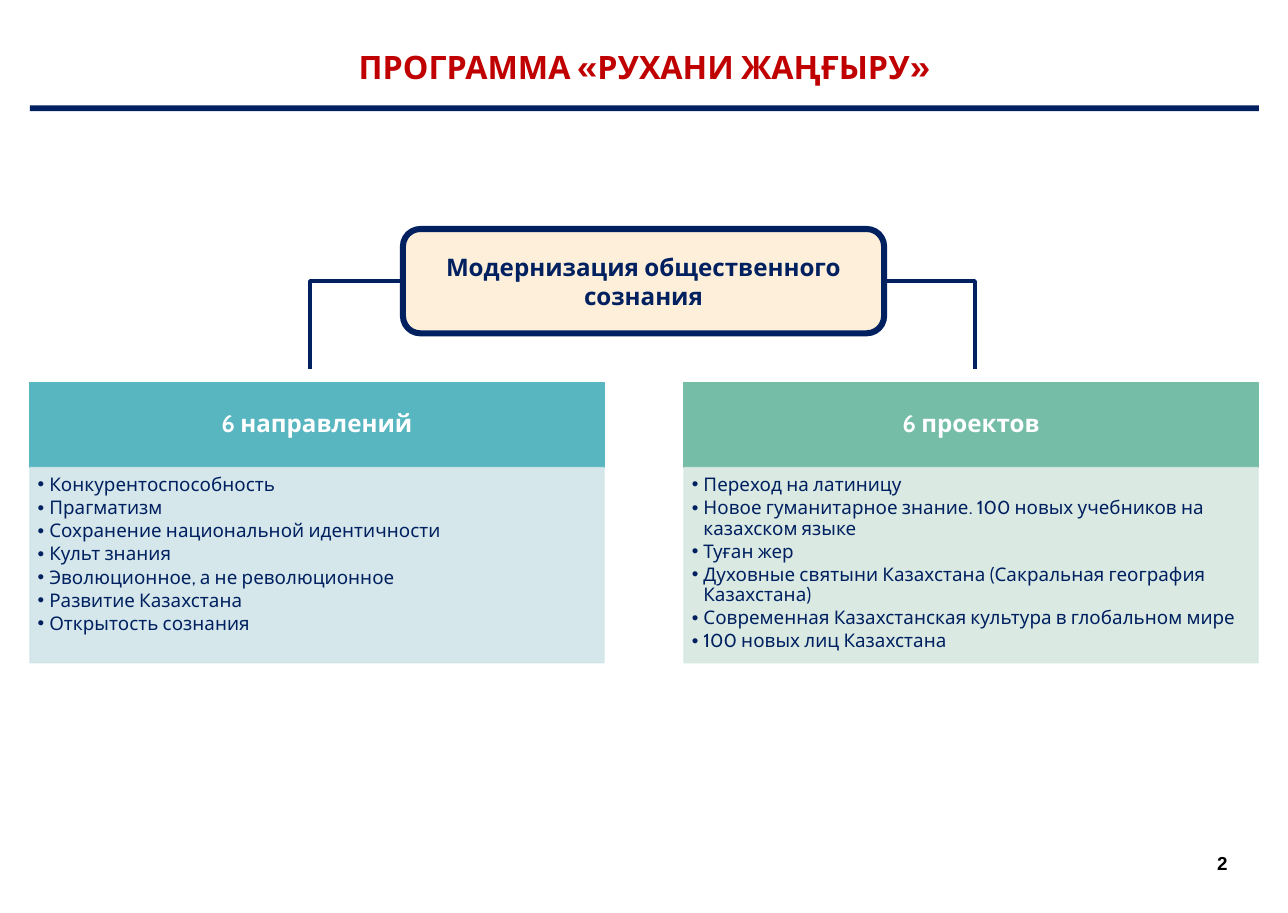
from pptx import Presentation
from pptx.dml.color import RGBColor
from pptx.enum.shapes import MSO_CONNECTOR, MSO_SHAPE
from pptx.enum.text import MSO_ANCHOR, MSO_AUTO_SIZE, PP_ALIGN
from pptx.oxml.ns import qn
from pptx.util import Inches, Pt
from lxml.etree import SubElement

NAVY = "002060"


def paint(color_format, color):
    color_format.rgb = RGBColor.from_string(color)


def write(shape, lines, size, color, bold, font="Cabin", align=PP_ALIGN.CENTER,
          anchor=MSO_ANCHOR.MIDDLE, insets=(0.1, 0.05, 0.1, 0.05), spacing=1, after=0, hanging=0):
    frame = shape.text_frame
    frame.text = "\n".join(lines)
    frame.word_wrap = True
    frame.auto_size = MSO_AUTO_SIZE.NONE
    frame.vertical_anchor = anchor
    frame.margin_left, frame.margin_top, frame.margin_right, frame.margin_bottom = map(Inches, insets)
    for paragraph in frame.paragraphs:
        if hanging:
            properties = paragraph._p.get_or_add_pPr()
            properties.set("marL", str(Inches(hanging)))
            properties.set("indent", str(-Inches(hanging)))
            SubElement(properties, qn("a:buChar"), char="•")
        paragraph.alignment = align
        paragraph.line_spacing = spacing
        paragraph.space_before = Pt(0)
        paragraph.space_after = Pt(after)
        paragraph.font.name = font
        paragraph.font.size = Pt(size)
        paragraph.font.bold = bold
        paint(paragraph.font.color, color)


presentation = Presentation()
presentation.slide_width = Inches(13.33)
presentation.slide_height = Inches(9.45)
slide = presentation.slides.add_slide(presentation.slide_layouts.get_by_name("Comparison"))
title, *column_parts = slide.placeholders

# Title and the rule below it
title.left, title.top, title.width, title.height = map(Inches, (0, 0, 13.33, 0.94))
write(title, ["ПРОГРАММА «РУХАНИ ЖАҢҒЫРУ»"], 24, "C00000", True,
      anchor=MSO_ANCHOR.BOTTOM, spacing=0.9)
rule = slide.shapes.add_shape(MSO_SHAPE.RECTANGLE, *map(Inches, (0.31, 1.09, 12.72, 0.06)))
rule.shadow.inherit = False
rule.fill.solid()
paint(rule.fill.fore_color, NAVY)
rule.line.fill.background()

# Central theme
theme = slide.shapes.add_shape(MSO_SHAPE.ROUNDED_RECTANGLE, *map(Inches, (4.17, 2.37, 4.98, 1.08)))
theme.shadow.inherit = False
theme.fill.solid()
paint(theme.fill.fore_color, "FDEFDA")
theme.line.width = Pt(4.5)
paint(theme.line.color, NAVY)
write(theme, ["Модернизация общественного сознания"], 18, NAVY, True)

# Single-bend connectors from the theme to the columns
for start, end in ((4.17, 3.21), (9.16, 10.09)):
    connector = slide.shapes.add_connector(
        MSO_CONNECTOR.ELBOW, Inches(start), Inches(2.91), Inches(end), Inches(3.82))
    connector.line.width = Pt(3)
    paint(connector.line.color, NAVY)
    connector_properties = connector._element.spPr
    connector_properties.find(qn("a:prstGeom")).set("prst", "bentConnector2")
    SubElement(connector_properties, qn("a:effectLst"))

# Columns: a heading above a bulleted list
columns = [
    (0.31, "6 направлений", "58B6C0", "D1E5E8", [
        "Конкурентоспособность",
        "Прагматизм",
        "Сохранение национальной идентичности",
        "Культ знания",
        "Эволюционное, а не революционное",
        "Развитие Казахстана",
        "Открытость сознания",
    ]),
    (7.08, "6 проектов", "75BDA7", "D6E8E1", [
        "Переход на латиницу",
        "Новое гуманитарное знание. 100 новых учебников на казахском языке",
        "Туған жер",
        "Духовные святыни Казахстана (Сакральная география Казахстана)",
        "Современная Казахстанская культура в глобальном мире",
        "100 новых лиц Казахстана",
    ]),
]
for index, (left, heading_text, heading_color, list_color, items) in enumerate(columns):
    heading, item_list = column_parts[2 * index:2 * index + 2]
    for shape, top, height, color in ((heading, 3.96, 0.88, heading_color),
                                      (item_list, 4.84, 2.02, list_color)):
        shape.left, shape.top, shape.width, shape.height = map(Inches, (left, top, 5.94, height))
        shape.fill.solid()
        paint(shape.fill.fore_color, color)
        shape.line.width = Pt(1)
        paint(shape.line.color, color)
    write(heading, [heading_text], 18, "FFFFFF", True,
          insets=(0.14, 0.08, 0.14, 0.08), spacing=0.9)
    write(item_list, items, 14, NAVY, False, align=PP_ALIGN.LEFT, anchor=MSO_ANCHOR.TOP,
          insets=(0.08, 0.08, 0.11, 0.12), spacing=0.9, after=2.1, hanging=0.12)
    # Slightly transparent list panel
    for color_element in item_list._element.spPr.iter(qn("a:srgbClr")):
        SubElement(color_element, qn("a:alpha"), val="90000")

# Page number
page_number = slide.shapes.add_textbox(*map(Inches, (12.27, 8.77, 0.76, 0.34)))
write(page_number, ["2"], 14, "000000", True, font="Arial", anchor=MSO_ANCHOR.TOP)

presentation.save("out.pptx")
